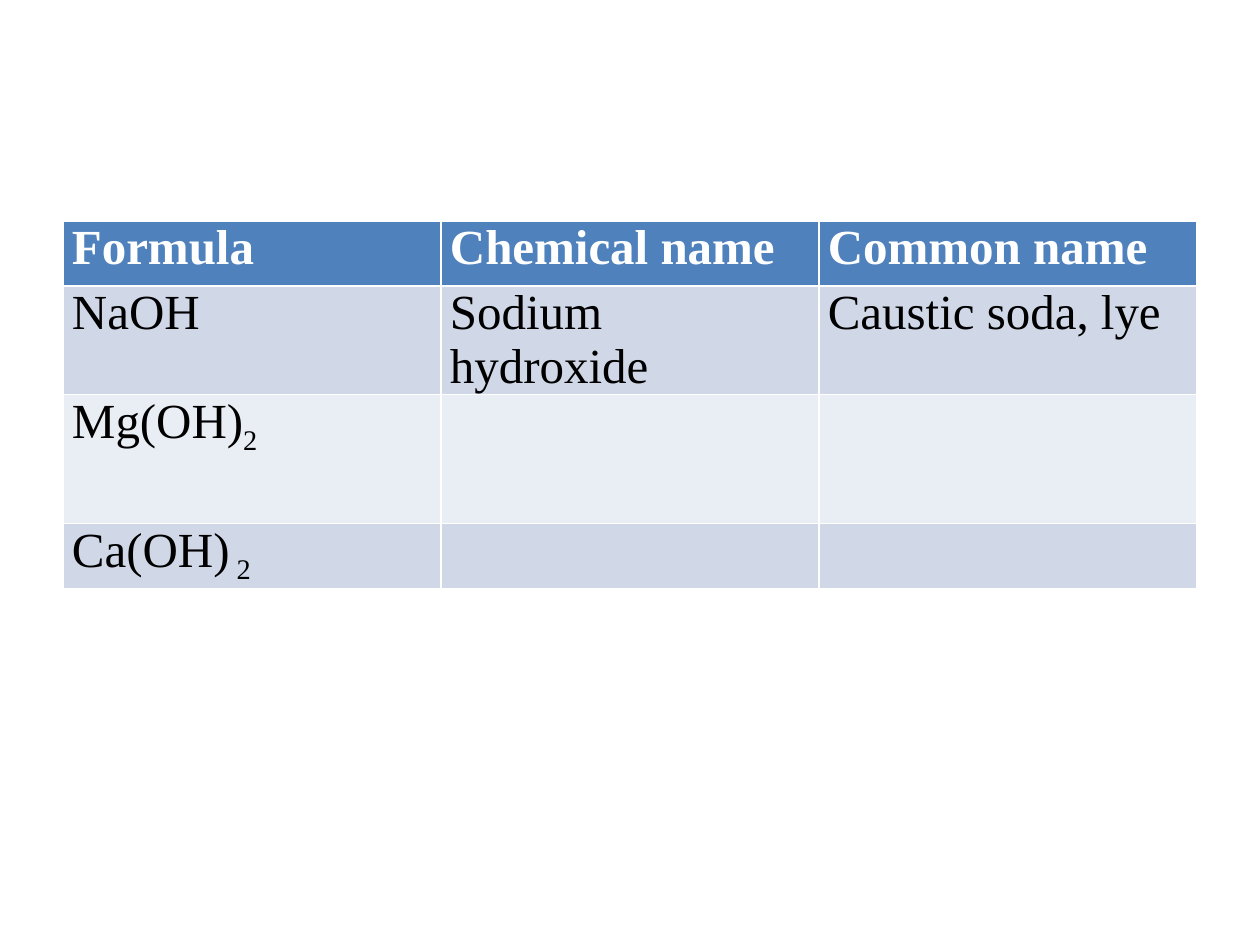
from dataclasses import dataclass
from pptx import Presentation
from pptx.dml.color import RGBColor as Rgb
from pptx.util import Emu, Pt

PX = 914400 // 126
HEADS = ["Formula", "Chemical name", "Common name"]
BASES = [
    [("NaOH",), ("Sodium hydroxide",), ("Caustic soda, lye",)],
    [("Mg(OH)", "2"), (), ()],
    [("Ca(OH)", " 2"), (), ()],
]
ROWS = [65, 65, 129, 65]


@dataclass(frozen=True)
class Theme:
    """Hold the colours and type of the slide."""
    font: str = "Times New Roman"
    size: int = 28
    head: str = "4F81BD"
    bands: tuple = ("D0D8E8", "E9EDF4")
    light: str = "FFFFFF"
    dark: str = "000000"


LOOK = Theme()


def px(num):
    """Turn pixels into EMU."""
    return Emu(num * PX)


def style(run, tint, bold):
    """Give a run the table's type."""
    font = run.font
    font.name, font.size, font.bold = LOOK.font, Pt(LOOK.size), bold
    font.color.rgb = Rgb.from_string(tint)


def write(cell, parts, fill, tint, bold=False):
    """Fill a cell with a text and an optional subscript."""
    cell.fill.solid()
    cell.fill.fore_color.rgb = Rgb.from_string(fill)
    cell.margin_left = cell.margin_right = px(9)
    cell.margin_top = cell.margin_bottom = 0
    for pos, part in enumerate(parts):
        run = cell.text_frame.paragraphs[0].add_run()
        run.text = part
        style(run, tint, bold)
        if pos:
            run._r.get_or_add_rPr().set("baseline", "-25000")


def add_grid(slide):
    """Add the table of bases."""
    frame = slide.shapes.add_table(
        len(ROWS), len(HEADS), px(63), px(221), px(1134), px(sum(ROWS)))
    grid = frame.table
    for row, high in zip(grid.rows, ROWS):
        row.height = px(high)
    for col, head in enumerate(HEADS):
        write(grid.cell(0, col), [head], LOOK.head, LOOK.light, True)
    for num, base in enumerate(BASES):
        for col, parts in enumerate(base):
            write(grid.cell(num + 1, col), parts, LOOK.bands[num % 2], LOOK.dark)


def main():
    """Build and save the slide."""
    deck = Presentation()
    deck.slide_width, deck.slide_height = px(1260), px(945)
    add_grid(deck.slides.add_slide(deck.slide_layouts[6]))
    deck.save("out.pptx")


if __name__ == "__main__":
    main()
